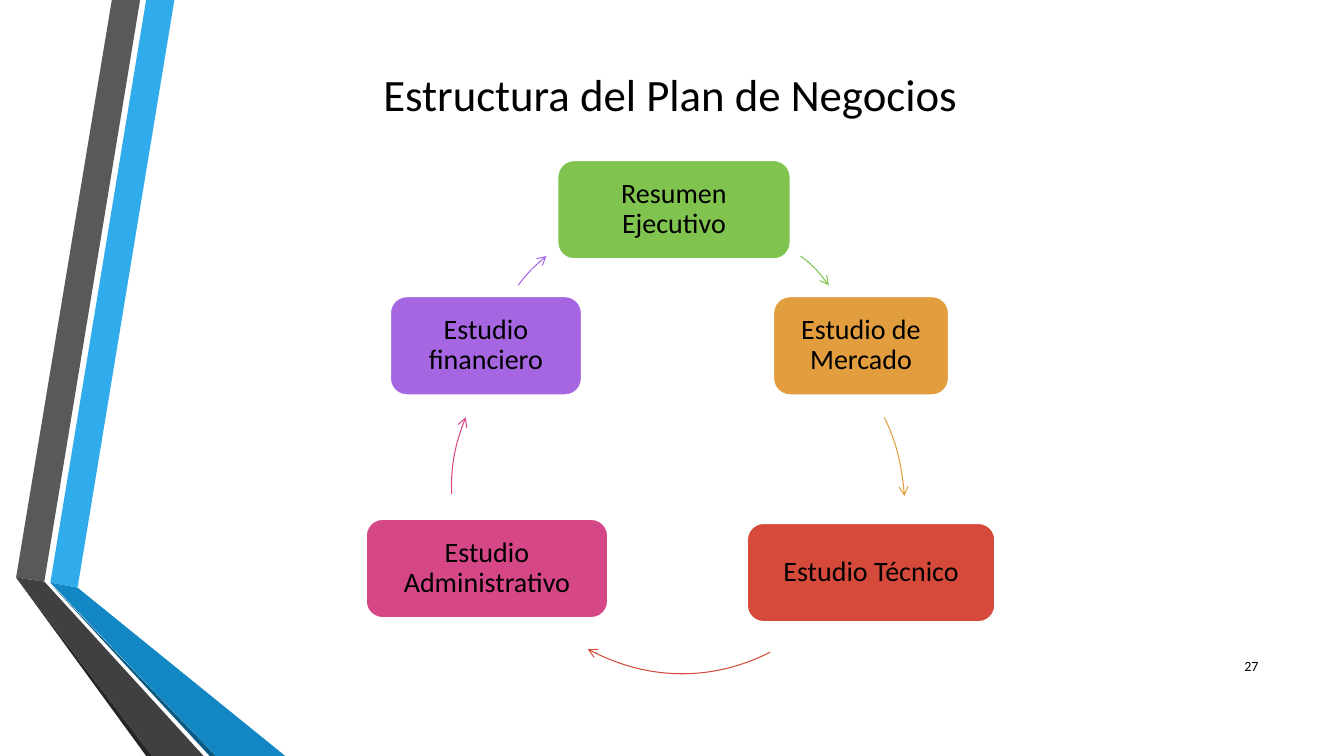
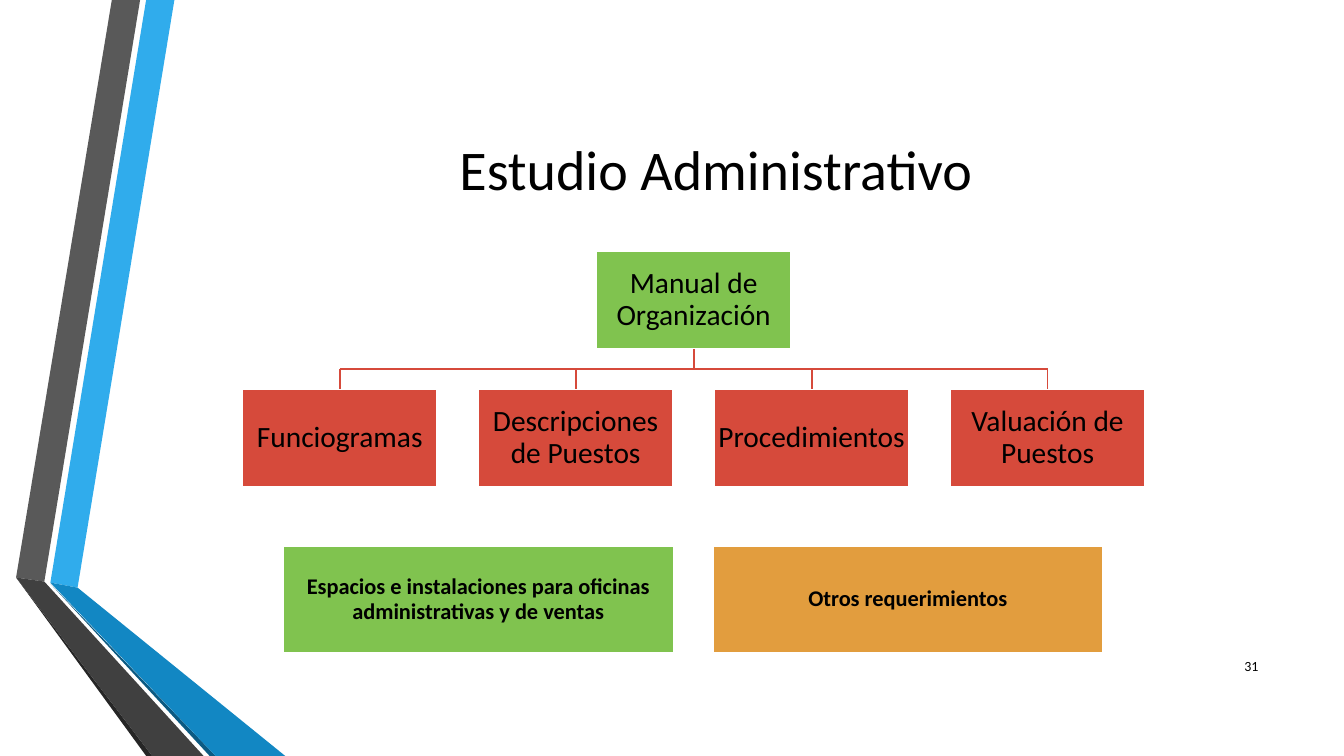
from dataclasses import dataclass

import lxml.etree
import pptx
import pptx.dml.color
import pptx.enum.shapes
import pptx.enum.text
import pptx.oxml.ns
import pptx.shapes.autoshape
import pptx.slide
import pptx.util

Inches = pptx.util.Inches
Pt = pptx.util.Pt
qn = pptx.oxml.ns.qn
MSO_SHAPE = pptx.enum.shapes.MSO_SHAPE
STRAIGHT = pptx.enum.shapes.MSO_CONNECTOR.STRAIGHT
PP_ALIGN = pptx.enum.text.PP_ALIGN
Point = tuple[float, float]

FONT = "Calibri"
COLORS = {
    "text": "000000",
    "outline": "FFFFFF",
    "green": "80C34F",
    "orange": "E29D3E",
    "red": "D64A3B",
    "pink": "D64787",
    "purple": "A666E1",
    "light blue": "30ACEC",
    "blue": "1287C3",
    "dark blue": "0C5A82",
    "grey": "595959",
    "dark grey": "404040",
    "black": "262626",
}


@dataclass
class Ribbon:
    color: str
    points: list[Point]


@dataclass
class Box:
    text: str
    color: str
    left: float
    top: float
    width: float
    height: float


@dataclass
class BoxStyle:
    kind: pptx.enum.shapes.MSO_SHAPE
    size: int
    inset: float
    bold: bool = False


@dataclass
class Arc:
    color: str
    start: Point
    controls: tuple[Point, Point]
    end: Point


RIBBONS = [
    Ribbon("light blue", [(0.5, 5.78), (0.77, 5.83), (1.73, 0), (1.45, 0)]),
    Ribbon("grey", [(1.39, 0), (1.11, 0), (0.16, 5.73), (0.44, 5.77)]),
    Ribbon("black", [(0.16, 5.73), (1.45, 7.5), (1.51, 7.5)]),
    Ribbon("dark blue", [(0.5, 5.79), (2.08, 7.5), (2.14, 7.5)]),
    Ribbon("blue", [(0.5, 5.78), (2.14, 7.5), (2.83, 7.5), (0.77, 5.83)]),
    Ribbon("dark grey", [(2.02, 7.5), (0.44, 5.77), (0.16, 5.73), (1.51, 7.5)]),
]

# Business plan cycle
STEP_STYLE = BoxStyle(MSO_SHAPE.ROUNDED_RECTANGLE, 20, 0.13)
STEP_HEIGHT = 0.98
STEPS = [
    Box("Resumen Ejecutivo", "green", 5.53, 1.59, 2.31, STEP_HEIGHT),
    Box("Estudio de Mercado", "orange", 7.67, 2.94, 1.74, STEP_HEIGHT),
    Box("Estudio Técnico", "red", 7.41, 5.19, 2.46, STEP_HEIGHT),
    Box("Estudio Administrativo", "pink", 3.63, 5.15, 2.4, STEP_HEIGHT),
    Box("Estudio financiero", "purple", 3.87, 2.94, 1.9, STEP_HEIGHT),
]
ARCS = [
    Arc("green", (7.94, 2.54), ((8.05, 2.62), (8.14, 2.72)), (8.22, 2.83)),
    Arc("orange", (8.77, 4.14), ((8.89, 4.38), (8.95, 4.65)), (8.97, 4.92)),
    Arc("red", (7.64, 6.47), ((7.07, 6.76), (6.4, 6.75)), (5.83, 6.44)),
    Arc("pink", (4.48, 4.9), ((4.47, 4.64), (4.52, 4.38)), (4.62, 4.14)),
    Arc("purple", (5.14, 2.83), ((5.22, 2.72), (5.32, 2.62)), (5.42, 2.54)),
]

# Organization manual tree
TREE_STYLE = BoxStyle(MSO_SHAPE.RECTANGLE, 21, 0.01)
TREE_WIDTH, TREE_HEIGHT = 1.93, 0.97
TREE_CENTER = 6.88
BRANCH_PITCH = 2.34
ROOT_TOP, BRANCH_TOP = 2.49, 3.86
BRANCHES = ["Funciogramas", "Descripciones de Puestos", "Procedimientos", "Valuación de Puestos"]

REQUIREMENT_STYLE = BoxStyle(MSO_SHAPE.RECTANGLE, 16, 0.07, bold=True)
REQUIREMENTS = [
    Box("Espacios e instalaciones para oficinas administrativas y de ventas",
        "green", 2.81, 5.42, 3.87, 1.06),
    Box("Otros requerimientos", "orange", 7.07, 5.42, 3.87, 1.06),
]


def rgb(color: str) -> pptx.dml.color.RGBColor:
    return pptx.dml.color.RGBColor.from_string(COLORS[color])


def emu(point: Point) -> tuple[int, int]:
    return Inches(point[0]), Inches(point[1])


def write(shape: pptx.shapes.autoshape.Shape, text: str, size: int,
          align: PP_ALIGN = PP_ALIGN.CENTER, bold: bool = False) -> None:
    """Set one centred-in-height paragraph in the shared font."""
    frame = shape.text_frame
    frame.word_wrap = True
    frame.vertical_anchor = pptx.enum.text.MSO_ANCHOR.MIDDLE
    frame.text = text
    para = frame.paragraphs[0]
    para.alignment = align
    para.line_spacing = 0.9
    font = para.runs[0].font
    font.name, font.size, font.bold = FONT, Pt(size), bold
    font.color.rgb = rgb("text")


def add_ribbons(slide: pptx.slide.Slide) -> None:
    """Draw the folded bands and place them on the layout of the slide."""
    layout = slide.slide_layout
    for holder in list(layout.placeholders):
        holder.element.getparent().remove(holder.element)
    for ribbon in RIBBONS:
        first, *rest = map(emu, ribbon.points)
        builder = slide.shapes.build_freeform(*first)
        builder.add_line_segments(rest, close=True)
        shape = builder.convert_to_shape()
        shape.shadow.inherit = False
        shape.fill.solid()
        shape.fill.fore_color.rgb = rgb(ribbon.color)
        shape.line.fill.background()
        layout.shapes.element.append(shape.element)


def add_title(slide: pptx.slide.Slide, text: str, left: float, top: float, size: int) -> None:
    box = slide.shapes.add_textbox(Inches(left), Inches(top), Inches(10.96), Inches(1.92))
    write(box, text, size)


def add_page_number(slide: pptx.slide.Slide, number: int) -> None:
    box = slide.shapes.add_textbox(Inches(11.98), Inches(6.42), Inches(0.6), Inches(0.4))
    write(box, str(number), 10, PP_ALIGN.RIGHT)


def add_box(slide: pptx.slide.Slide, box: Box, style: BoxStyle) -> pptx.shapes.autoshape.Shape:
    shape = slide.shapes.add_shape(style.kind, Inches(box.left), Inches(box.top),
                                   Inches(box.width), Inches(box.height))
    shape.shadow.inherit = False
    shape.fill.solid()
    shape.fill.fore_color.rgb = rgb(box.color)
    shape.line.color.rgb = rgb("outline")
    shape.line.width = Pt(1.25)
    frame = shape.text_frame
    frame.margin_left = frame.margin_right = Inches(style.inset)
    frame.margin_top = frame.margin_bottom = Inches(style.inset)
    write(shape, box.text, style.size, bold=style.bold)
    return shape


def add_arc(slide: pptx.slide.Slide, arc: Arc) -> None:
    """Draw an open Bézier curve that ends in an arrowhead."""
    builder = slide.shapes.build_freeform(*emu(arc.start))
    builder.add_line_segments([emu(arc.end)], close=False)
    shape = builder.convert_to_shape()
    shape.shadow.inherit = False
    shape.fill.background()
    shape.line.color.rgb = rgb(arc.color)
    shape.line.width = Pt(0.75)

    segment = shape.element.xpath(".//a:lnTo")[0]
    curve = lxml.etree.Element(qn("a:cubicBezTo"))
    for x, y in map(emu, (*arc.controls, arc.end)):
        lxml.etree.SubElement(curve, qn("a:pt"), x=str(x - shape.left), y=str(y - shape.top))
    segment.getparent().replace(segment, curve)

    outline = shape.element.xpath("./p:spPr/a:ln")[0]
    lxml.etree.SubElement(outline, qn("a:tailEnd"), type="arrow")


def add_line(slide: pptx.slide.Slide, start: Point, end: Point):
    line = slide.shapes.add_connector(STRAIGHT, *emu(start), *emu(end))
    line.line.color.rgb = rgb("red")
    line.line.width = Pt(1.25)
    lxml.etree.SubElement(line.element.spPr, qn("a:effectLst"))
    return line


def add_tree(slide: pptx.slide.Slide) -> None:
    root_bottom = ROOT_TOP + TREE_HEIGHT
    bus = (root_bottom + BRANCH_TOP) / 2
    middle = (len(BRANCHES) - 1) / 2
    centers = [TREE_CENTER + (i - middle) * BRANCH_PITCH for i in range(len(BRANCHES))]

    def node(text: str, color: str, center: float, top: float):
        box = Box(text, color, center - TREE_WIDTH / 2, top, TREE_WIDTH, TREE_HEIGHT)
        return add_box(slide, box, TREE_STYLE)

    root = node("Manual de Organización", "green", TREE_CENTER, ROOT_TOP)
    stem = add_line(slide, (TREE_CENTER, root_bottom), (TREE_CENTER, bus))
    stem.begin_connect(root, 2)
    add_line(slide, (centers[0], bus), (centers[-1], bus))
    for text, center in zip(BRANCHES, centers):
        branch = node(text, "red", center, BRANCH_TOP)
        drop = add_line(slide, (center, bus), (center, BRANCH_TOP))
        drop.end_connect(branch, 0)


def main() -> None:
    deck = pptx.Presentation()
    deck.slide_width, deck.slide_height = Inches(13.33), Inches(7.5)
    blank = deck.slide_layouts[6]

    # Cycle slide
    cycle = deck.slides.add_slide(blank)
    add_ribbons(cycle)
    add_title(cycle, "Estructura del Plan de Negocios", 1.17, 0, 32)
    for step, arc in zip(STEPS, ARCS):
        add_box(cycle, step, STEP_STYLE)
        add_arc(cycle, arc)
    add_page_number(cycle, 27)

    # Organization slide
    organization = deck.slides.add_slide(blank)
    add_title(organization, "Estudio Administrativo", 1.62, 0.75, 40)
    add_tree(organization)
    for requirement in REQUIREMENTS:
        add_box(organization, requirement, REQUIREMENT_STYLE)
    add_page_number(organization, 31)

    deck.save("out.pptx")


if __name__ == "__main__":
    main()
